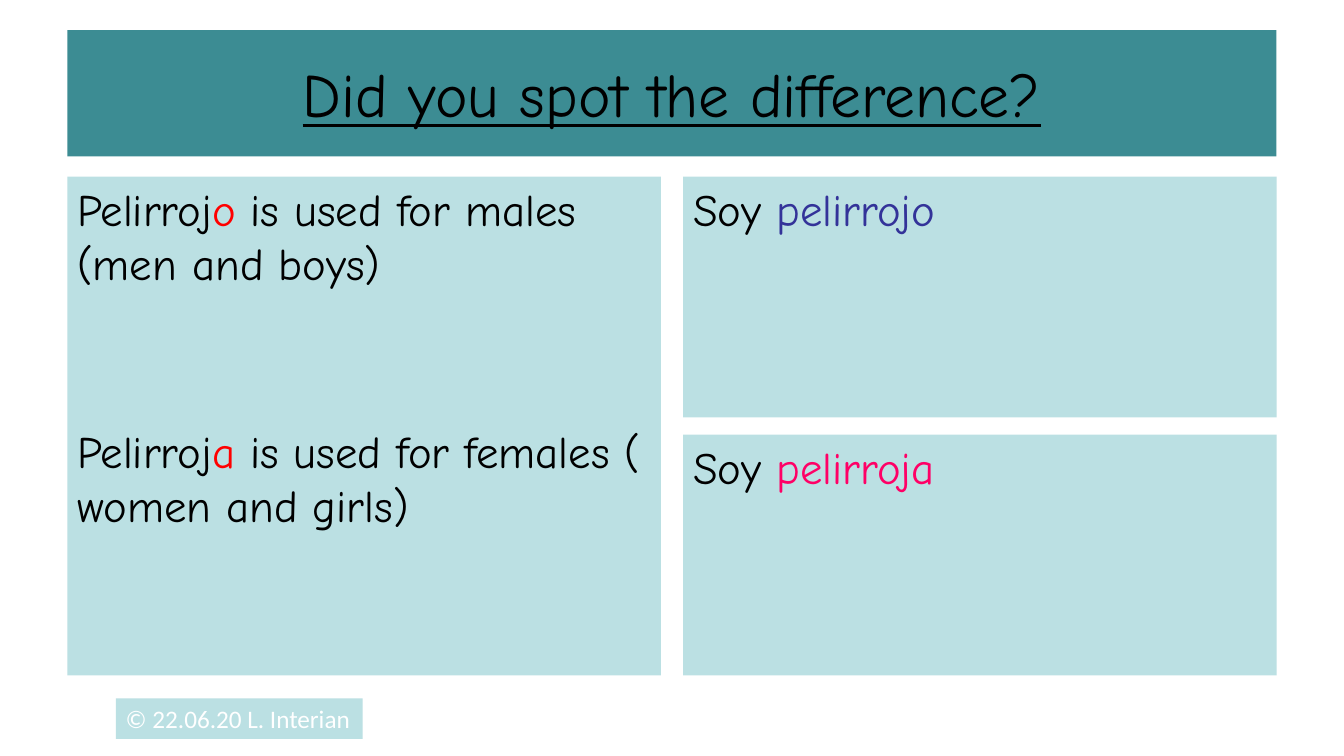
"""Build a slide on masculine and feminine forms of a Spanish adjective."""
from dataclasses import dataclass

from pptx import Presentation
from pptx.dml.color import RGBColor
from pptx.enum.shapes import MSO_SHAPE
from pptx.enum.text import MSO_ANCHOR, PP_ALIGN
from pptx.util import Cm, Pt

RECTANGLE = MSO_SHAPE.RECTANGLE
TOP, MIDDLE = MSO_ANCHOR.TOP, MSO_ANCHOR.MIDDLE
LEFT, CENTER = PP_ALIGN.LEFT, PP_ALIGN.CENTER

TEAL = RGBColor(0x3C, 0x8C, 0x93)
PALE_TEAL = RGBColor(0xBB, 0xE0, 0xE3)
BLACK = RGBColor(0x00, 0x00, 0x00)
WHITE = RGBColor(0xFF, 0xFF, 0xFF)
RED = RGBColor(0xFF, 0x00, 0x00)
INDIGO = RGBColor(0x33, 0x33, 0x99)
PINK = RGBColor(0xFF, 0x00, 0x66)

PAGE_WIDTH, PAGE_HEIGHT = 33.87, 19.05
MARGIN = 1.7
CONTENT_WIDTH = PAGE_WIDTH - 2 * MARGIN
COLUMN_GAP, ROW_GAP = 0.56, 0.43
COLUMN_WIDTH = (CONTENT_WIDTH - COLUMN_GAP) / 2
RIGHT_COLUMN = MARGIN + COLUMN_WIDTH + COLUMN_GAP
BODY_TOP, BODY_HEIGHT = 4.45, 12.57
ROW_HEIGHT = (BODY_HEIGHT - ROW_GAP) / 2
SECOND_ROW = BODY_TOP + ROW_HEIGHT + ROW_GAP
RULE_GAP = 96


@dataclass(frozen=True)
class Span:
    text: str
    color: RGBColor = BLACK


@dataclass(frozen=True)
class Panel:
    left: float
    top: float
    width: float
    height: float
    paragraphs: tuple[tuple[Span, ...], ...]
    fill: RGBColor = PALE_TEAL
    size: int = 32
    font: str = "Comic Neue"
    underline: bool = False
    align: PP_ALIGN = LEFT
    anchor: MSO_ANCHOR = TOP
    wrap: bool = True


PANELS = (
    Panel(MARGIN, 0.76, CONTENT_WIDTH, 3.18,
          ((Span("Did you spot the difference?"),),),
          fill=TEAL, size=44, underline=True, align=CENTER, anchor=MIDDLE),
    Panel(MARGIN, BODY_TOP, COLUMN_WIDTH, BODY_HEIGHT, (
        (Span("Pelirroj"), Span("o", RED),
         Span(" is used for males (men and boys)")),
        (Span("Pelirroj"), Span("a", RED),
         Span(" is used for females ( women and girls)")),
    )),
    Panel(RIGHT_COLUMN, BODY_TOP, COLUMN_WIDTH, ROW_HEIGHT,
          ((Span("Soy "), Span("pelirrojo", INDIGO)),)),
    Panel(RIGHT_COLUMN, SECOND_ROW, COLUMN_WIDTH, ROW_HEIGHT,
          ((Span("Soy "), Span("pelirroja", PINK)),)),
    Panel(2.92, 17.6, 6.22, 1.02,
          ((Span("© 22.06.20 L. Interian", WHITE),),),
          size=18, font="Calibri", wrap=False),
)


def add_text(para, text: str, *, size: int, font: str, color: RGBColor,
             underline: bool) -> None:
    run = para.add_run()
    run.text = text
    run.font.size = Pt(size)
    run.font.name = font
    run.font.color.rgb = color
    run.font.underline = underline


def draw_panel(page, panel: Panel) -> None:
    box = page.shapes.add_shape(RECTANGLE, Cm(panel.left), Cm(panel.top),
                                Cm(panel.width), Cm(panel.height))
    box.shadow.inherit = False
    box.fill.solid()
    box.fill.fore_color.rgb = panel.fill
    box.line.fill.background()
    frame = box.text_frame
    frame.word_wrap = panel.wrap
    frame.vertical_anchor = panel.anchor
    for index, spans in enumerate(panel.paragraphs):
        para = frame.add_paragraph() if index else frame.paragraphs[0]
        para.alignment = panel.align
        if index:
            para.space_before = Pt(RULE_GAP)
        for span in spans:
            add_text(para, span.text, size=panel.size, font=panel.font,
                     color=span.color, underline=panel.underline)


def main() -> None:
    deck = Presentation()
    deck.slide_width, deck.slide_height = Cm(PAGE_WIDTH), Cm(PAGE_HEIGHT)
    page = deck.slides.add_slide(deck.slide_layouts[6])
    for panel in PANELS:
        draw_panel(page, panel)
    deck.save("out.pptx")


if __name__ == "__main__":
    main()
